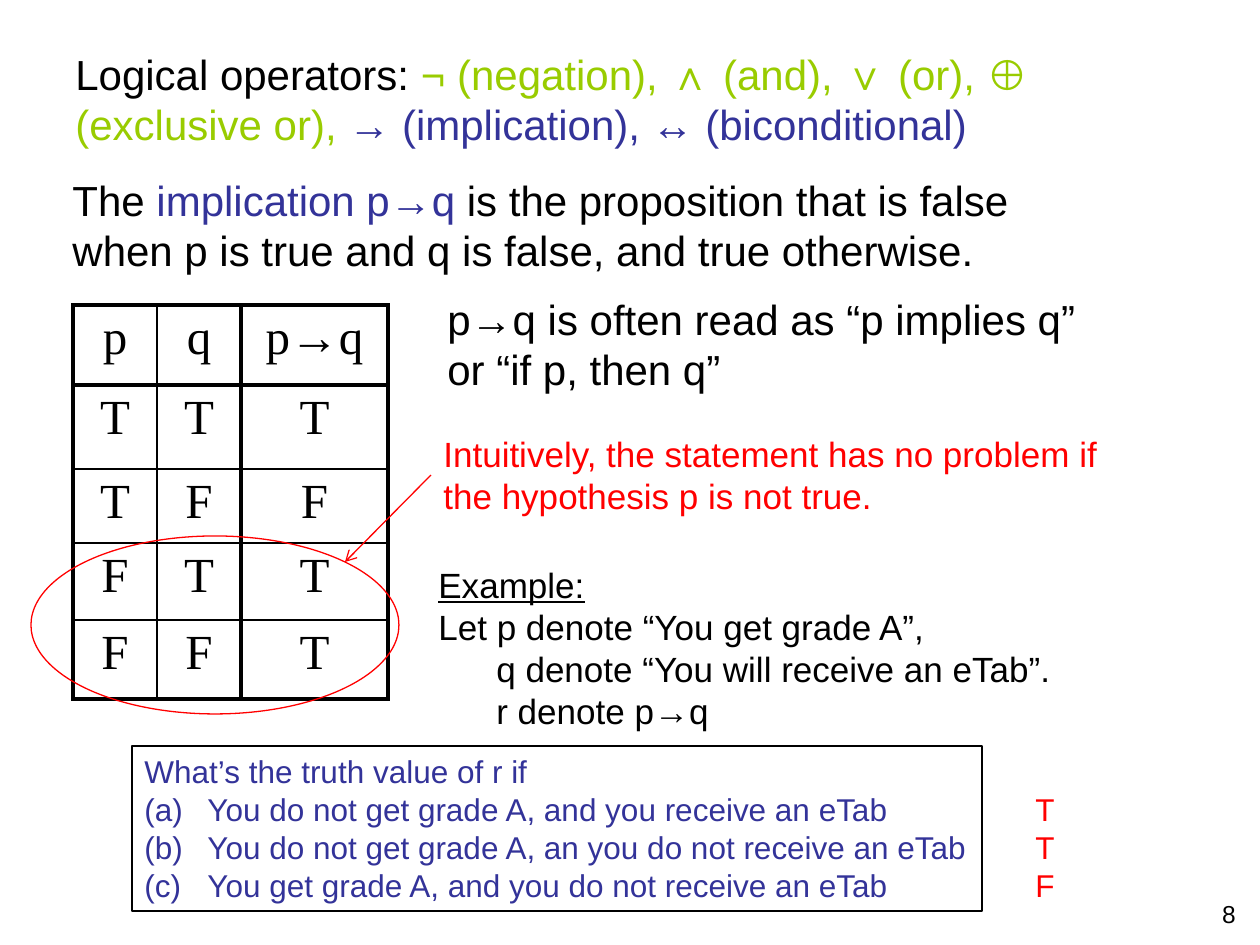
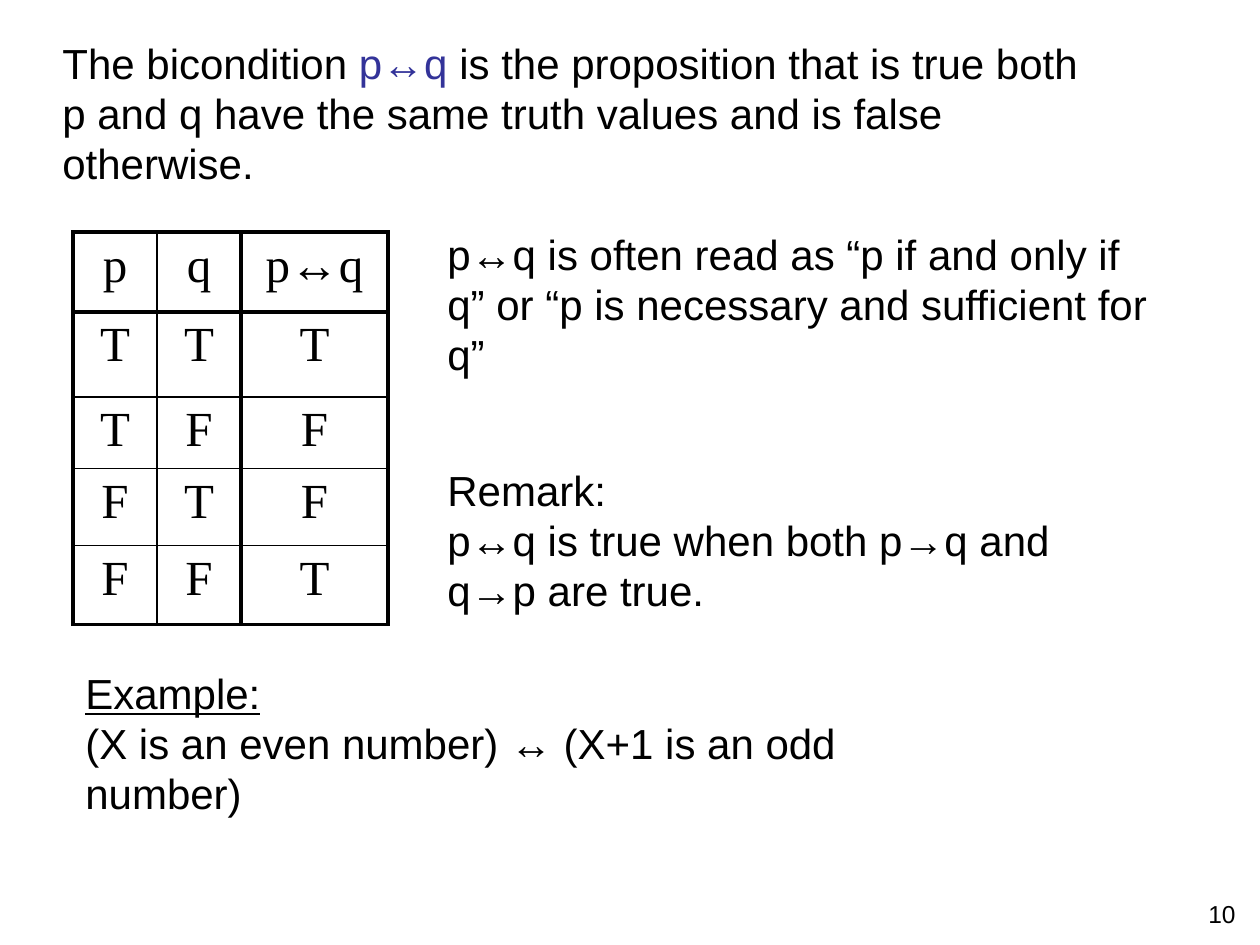
from lxml.etree import SubElement
from pptx import Presentation
from pptx.dml.color import RGBColor
from pptx.enum.shapes import MSO_CONNECTOR as Connector, MSO_SHAPE as Shape
from pptx.enum.text import MSO_ANCHOR as Anchor, PP_ALIGN as Align
from pptx.oxml.ns import qn
from pptx.util import Emu, Pt

# Shared look
PX_PER_INCH = 126
BLACK, GREEN, BLUE, RED = "000000", "99CC00", "333399", "FF0000"
BODY_FONT, TABLE_FONT = "Arial", "Times New Roman"
THIN = 0.75

# Truth table grid, with rule widths in points
TABLE_LEFT = 73
COLUMN_WIDTHS = [84, 84, 147]
COLUMN_RULES = [2.25, 1, 3, 2.25]
ROW_RULES = [2.25, 3, 1, 1, 1, 2.25]
INPUTS = ["TT", "TF", "FT", "FF"]


def px(length):
    return Emu(round(length * 914400 / PX_PER_INCH))


def box(*lengths):
    return [px(length) for length in lengths]


def rgb(hex_color):
    return RGBColor.from_string(hex_color)


def style_font(font, size, color=BLACK, name=BODY_FONT):
    font.size = Pt(size)
    font.name = name
    font.color.rgb = rgb(color)


def write(frame, paragraphs, size, color=BLACK):
    """Each paragraph is a string, or a list of (text, color) pieces."""
    frame.word_wrap = True
    frame.vertical_anchor = Anchor.TOP
    for index, content in enumerate(paragraphs):
        paragraph = frame.add_paragraph() if index else frame.paragraphs[0]
        paragraph.alignment = Align.LEFT
        pieces = [(content, color)] if isinstance(content, str) else content
        for text, piece_color in pieces:
            run = paragraph.add_run()
            run.text = text
            style_font(run.font, size, piece_color)
    return frame.paragraphs


def add_text(slide, place, paragraphs, size=24, color=BLACK):
    frame = slide.shapes.add_textbox(*box(*place)).text_frame
    return write(frame, paragraphs, size, color)


def add_example(slide, place, lines, size):
    paragraphs = add_text(slide, place, ["Example:", *lines], size)
    paragraphs[0].runs[0].font.underline = True
    return paragraphs


def add_page_number(slide, number):
    add_text(slide, (954, 893, 294, 39), [number], 14)[0].alignment = Align.RIGHT


def add_outline(slide, kind, place, color):
    outline = slide.shapes.add_shape(kind, *box(*place))
    outline.shadow.inherit = False
    outline.fill.background()
    outline.line.color.rgb = rgb(color)
    outline.line.width = Pt(THIN)
    return outline


def add_arrow(slide, start, end, color):
    arrow = slide.shapes.add_connector(Connector.STRAIGHT, *box(*start, *end))
    arrow.line.color.rgb = rgb(color)
    arrow.line.width = Pt(THIN)
    SubElement(arrow.line._get_or_add_ln(), qn("a:tailEnd"), type="arrow")
    SubElement(arrow._element.spPr, qn("a:effectLst"))


def indent(paragraph, left, first=0):
    properties = paragraph._p.get_or_add_pPr()
    properties.set("marL", str(px(left)))
    properties.set("indent", str(px(first)))
    return properties


def rule_cell(cell, row, column):
    rules = {
        "lnL": COLUMN_RULES[column],
        "lnR": COLUMN_RULES[column + 1],
        "lnT": ROW_RULES[row],
        "lnB": ROW_RULES[row + 1],
    }
    properties = cell._tc.get_or_add_tcPr()
    for side, width in rules.items():
        rule = SubElement(properties, qn(f"a:{side}"), w=str(Pt(width)))
        paint = SubElement(rule, qn("a:solidFill"))
        SubElement(paint, qn("a:srgbClr"), val=BLACK)


def add_truth_table(slide, top, row_heights, formula, results):
    rows = ["p", "q", formula], *[[*pair, result] for pair, result in zip(INPUTS, results)]
    place = box(TABLE_LEFT, top, sum(COLUMN_WIDTHS), sum(row_heights))
    table = slide.shapes.add_table(len(rows), len(COLUMN_WIDTHS), *place).table
    table.first_row = table.horz_banding = False
    for column, width in zip(table.columns, COLUMN_WIDTHS):
        column.width = px(width)
    for r, values in enumerate(rows):
        table.rows[r].height = px(row_heights[r])
        for c, value in enumerate(values):
            cell = table.cell(r, c)
            rule_cell(cell, r, c)
            cell.fill.background()
            paragraph = cell.text_frame.paragraphs[0]
            paragraph.text = value
            paragraph.alignment = Align.CENTER
            style_font(paragraph.runs[0].font, 28, name=TABLE_FONT)


def add_quiz(slide):
    questions = [
        "What’s the truth value of r if",
        "You do not get grade A, and you receive an eTab",
        "You do not get grade A, an you do not receive an eTab",
        "You get grade A, and you do not receive an eTab",
    ]
    frame = add_outline(slide, Shape.RECTANGLE, (132, 746, 850, 165), BLACK).text_frame
    for index, paragraph in enumerate(write(frame, questions, 18, BLUE)):
        properties = indent(paragraph, 63, -63)
        if index:
            SubElement(properties, qn("a:buFont"), typeface=BODY_FONT)
            SubElement(properties, qn("a:buAutoNum"), type="alphaLcParenBoth")
    add_text(slide, (1023, 784, 45, 127), "TTF", 18, RED)


def build_implication(slide):
    add_page_number(slide, "8")
    add_text(slide, (63, 42, 1134, 113), [[
        ("Logical operators: ", BLACK),
        ("¬ (negation), ∧ (and), ∨ (or), ⊕ (exclusive or), ", GREEN),
        ("→ (implication), ↔ (biconditional)", BLUE),
    ]])
    add_text(slide, (60, 168, 1062, 113), [[
        ("The ", BLACK),
        ("implication p→q", BLUE),
        (" is the proposition that is false when p is true and q is false, "
         "and true otherwise.", BLACK),
    ]])
    add_truth_table(slide, 305, [80, 84, 74, 77, 79], "p→q", "TFTT")
    add_text(slide, (435, 287, 653, 113),
             ["p→q is often read as “p implies q” or “if p, then q”"])

    # Example and its questions
    example = add_example(slide, (426, 557, 753, 183), [
        "Let p denote “You get grade A”,",
        "q denote “You will receive an eTab”.",
        "r denote p→q",
    ], 20)
    for definition in example[2:]:
        indent(definition, 58)
    add_quiz(slide)

    # Remark on the rows with a false hypothesis
    add_outline(slide, Shape.OVAL, (31, 536, 368, 178), RED)
    add_text(slide, (431, 426, 722, 97),
             ["Intuitively, the statement has no problem if the hypothesis p is not true."],
             20, RED)
    add_arrow(slide, (431, 475), (345, 562), RED)


def build_biconditional(slide):
    add_page_number(slide, "10")
    add_text(slide, (50, 31, 1062, 166), [[
        ("The bicondition", BLACK),
        (" p↔q", BLUE),
        (" is the proposition that is true both p and q have the same truth "
         "values and is false otherwise.", BLACK),
    ]])
    add_truth_table(slide, 232, [80, 85, 71, 77, 79], "p↔q", "TFFT")
    add_text(slide, (435, 222, 725, 165),
             ["p↔q is often read as “p if and only if q” or “p is necessary "
              "and sufficient for q”"])
    add_example(slide, (73, 661, 880, 113),
                ["(X is an even number) ↔ (X+1 is an odd number)"], 24)
    add_text(slide, (435, 458, 725, 164),
             ["Remark:", "p↔q is true when both p→q and q→p are true."])


def main():
    deck = Presentation()
    deck.slide_width, deck.slide_height = box(1260, 945)
    blank = deck.slide_layouts[6]
    for build in (build_implication, build_biconditional):
        build(deck.slides.add_slide(blank))
    deck.save("out.pptx")


if __name__ == "__main__":
    main()
